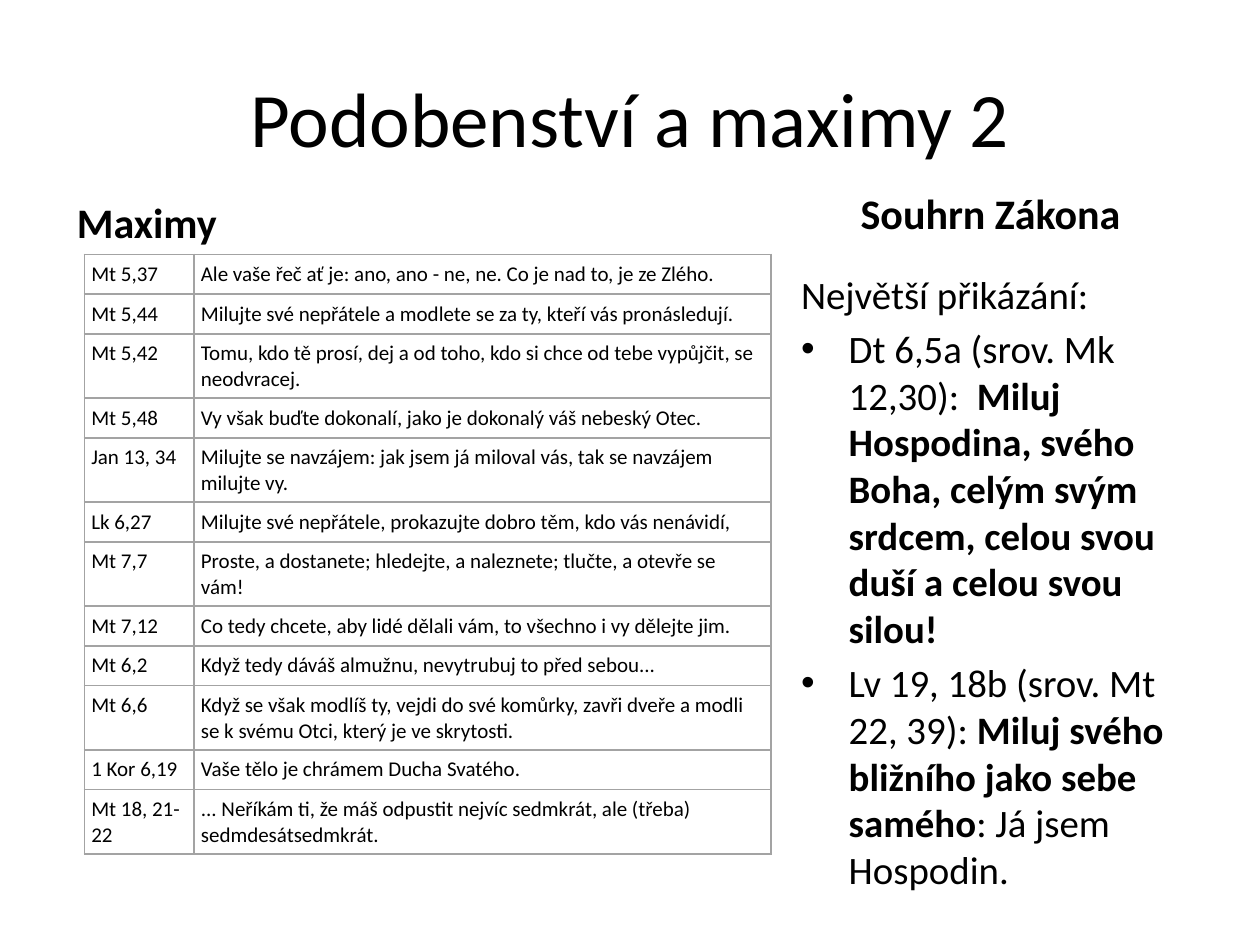
import pptx
import pptx.dml.color
import pptx.enum.text
import pptx.oxml.ns
import pptx.util
from lxml import etree

Cm, Pt = pptx.util.Cm, pptx.util.Pt
qn = pptx.oxml.ns.qn
ALIGN = pptx.enum.text.PP_ALIGN
ANCHOR = pptx.enum.text.MSO_ANCHOR

BLACK = pptx.dml.color.RGBColor(0x00, 0x00, 0x00)
GREY = pptx.dml.color.RGBColor(0xA3, 0xA3, 0xA3)
FONT = "Calibri"

MAXIMS = [
    ("Mt 5,37", "Ale vaše řeč ať je: ano, ano - ne, ne. Co je nad to, je ze Zlého."),
    ("Mt 5,44", "Milujte své nepřátele a modlete se za ty, kteří vás pronásledují."),
    ("Mt 5,42", "Tomu, kdo tě prosí, dej a od toho, kdo si chce od tebe vypůjčit, se neodvracej."),
    ("Mt 5,48", "Vy však buďte dokonalí, jako je dokonalý váš nebeský Otec."),
    ("Jan 13, 34", "Milujte se navzájem: jak jsem já miloval vás, tak se navzájem milujte vy."),
    ("Lk 6,27", "Milujte své nepřátele, prokazujte dobro těm, kdo vás nenávidí,"),
    ("Mt 7,7", "Proste, a dostanete; hledejte, a naleznete; tlučte, a otevře se vám!"),
    ("Mt 7,12", "Co tedy chcete, aby lidé dělali vám, to všechno i vy dělejte jim."),
    ("Mt 6,2", "Když tedy dáváš almužnu, nevytrubuj to před sebou..."),
    ("Mt 6,6", "Když se však modlíš ty, vejdi do své komůrky, zavři dveře a modli se k svému Otci, "
               "který je ve skrytosti."),
    ("1 Kor 6,19", "Vaše tělo je chrámem Ducha Svatého."),
    ("Mt 18, 21-22", "... Neříkám ti, že máš odpustit nejvíc sedmkrát, ale (třeba) sedmdesátsedmkrát."),
]

# Each law is a list of (text, bold) runs
LAWS = [
    [("Dt 6,5a (srov. Mk 12,30):  ", False),
     ("Miluj Hospodina, svého Boha, celým svým srdcem, celou svou duší a celou svou silou!", True)],
    [("Lv 19, 18b (srov. Mt 22, 39): ", False),
     ("Miluj svého bližního jako sebe samého", True),
     (": Já jsem Hospodin.", False)],
]


def write(para, text, size=12, bold=False, align=ALIGN.LEFT, bullet=False, before=0):
    """Fill a paragraph with a string or with (text, bold) runs."""
    if bullet:
        props = para._p.get_or_add_pPr()
        props.set("marL", str(Cm(0.96)))
        props.set("indent", str(-Cm(0.96)))
        etree.SubElement(props, qn("a:buFont"), typeface="Arial")
        etree.SubElement(props, qn("a:buChar"), char="•")
    para.alignment = align
    if before:
        para.space_before = Pt(before)
    runs = [(text, bold)] if isinstance(text, str) else text
    for words, heavy in runs:
        run = para.add_run()
        run.text = words
        run.font.name = FONT
        run.font.size = Pt(size)
        run.font.bold = heavy
        run.font.color.rgb = BLACK


def add_box(slide, left, top, width, height, anchor=ANCHOR.TOP):
    box = slide.shapes.add_textbox(Cm(left), Cm(top), Cm(width), Cm(height))
    frame = box.text_frame
    frame.word_wrap = True
    frame.vertical_anchor = anchor
    return frame


def add_head(slide, text, left, top, width, height):
    frame = add_box(slide, left, top, width, height, ANCHOR.BOTTOM)
    write(frame.paragraphs[0], text, size=24, bold=True)


def add_title(slide, text):
    title = slide.shapes.title
    title.left, title.top = Cm(1.27), Cm(0.76)
    title.width, title.height = Cm(22.86), Cm(3.18)
    title.text_frame.vertical_anchor = ANCHOR.MIDDLE
    write(title.text_frame.paragraphs[0], text, size=44, align=ALIGN.CENTER)


def add_laws(slide):
    frame = add_box(slide, 15.9, 5.33, 8.23, 11.68)
    write(frame.paragraphs[0], "Největší přikázání:", size=22.2)
    for law in LAWS:
        write(frame.add_paragraph(), law, size=22.2, bullet=True, before=4.4)


def frame_cell(cell):
    """Draw the four borders and leave the cell unfilled."""
    props = cell._tc.get_or_add_tcPr()
    for side in ("a:lnL", "a:lnR", "a:lnT", "a:lnB"):
        line = etree.SubElement(props, qn(side), w=str(Pt(1)))
        fill = etree.SubElement(line, qn("a:solidFill"))
        etree.SubElement(fill, qn("a:srgbClr"), val=str(GREY))
    cell.fill.background()


def add_grid(slide):
    widths = (2.21, 11.63)
    high = 0.8
    shape = slide.shapes.add_table(len(MAXIMS), len(widths), Cm(1.7), Cm(5.13),
                                   Cm(sum(widths)), Cm(high * len(MAXIMS)))
    grid = shape.table
    grid.first_row = grid.horz_banding = False
    for col, width in zip(grid.columns, widths):
        col.width = Cm(width)
    for row, texts in zip(grid.rows, MAXIMS):
        row.height = Cm(high)
        for cell, text in zip(row.cells, texts):
            cell.margin_left = cell.margin_right = Cm(0.14)
            cell.margin_top = cell.margin_bottom = Cm(0.14)
            frame_cell(cell)
            write(cell.text_frame.paragraphs[0], text)


def main():
    deck = pptx.Presentation()
    deck.slide_width, deck.slide_height = Cm(25.4), Cm(19.05)
    slide = deck.slides.add_slide(deck.slide_layouts[5])

    add_title(slide, "Podobenství a maximy 2")
    # Right column: summary of the law
    add_head(slide, "Souhrn Zákona", 17.1, 3.33, 7.03, 1.6)
    add_laws(slide)
    # Left column: maxims
    add_grid(slide)
    add_head(slide, "Maximy", 1.3, 3.33, 11.23, 1.78)

    deck.save("out.pptx")


if __name__ == "__main__":
    main()
